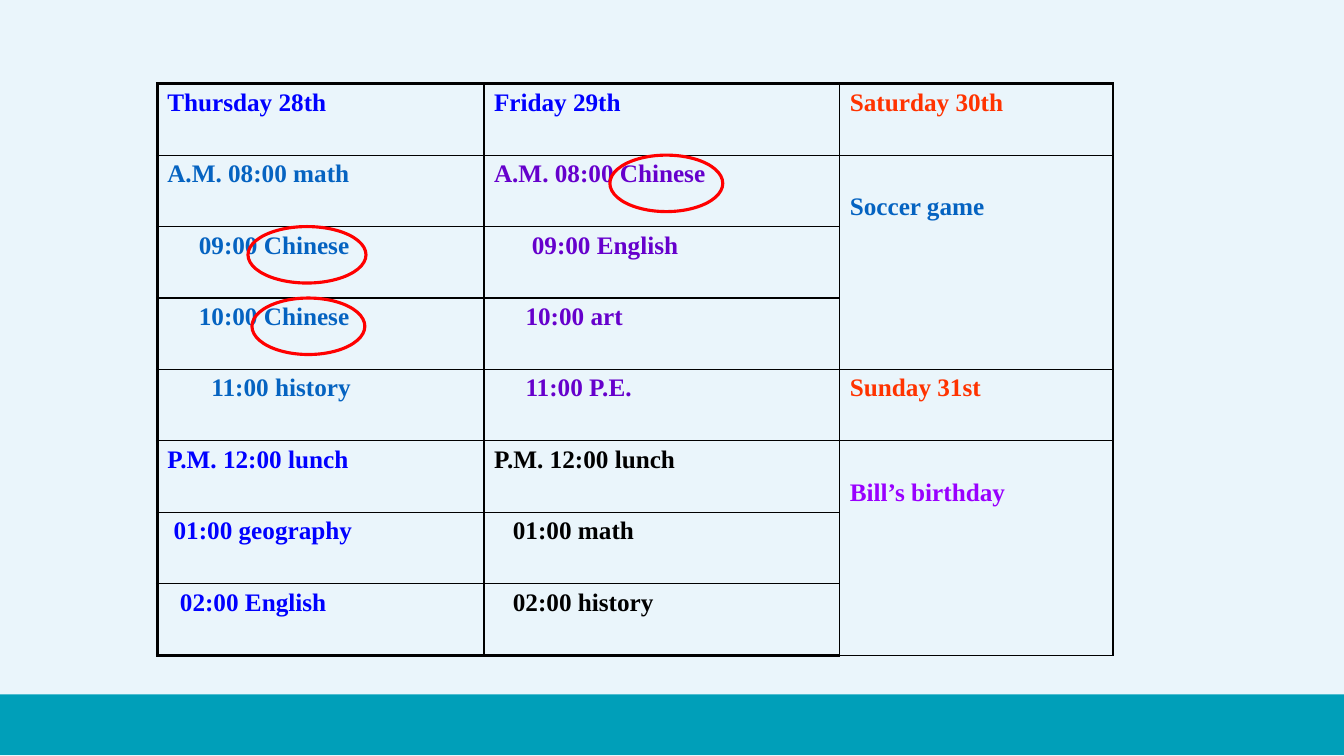
from dataclasses import dataclass

from lxml import etree
from pptx import Presentation
from pptx import util as u
from pptx.dml.color import RGBColor
from pptx.enum import shapes
from pptx.oxml.ns import qn


@dataclass(frozen=True)
class Theme:
    font: str = "Times New Roman"
    size: float = 18
    backdrop: str = "EAF5FB"
    band: str = "009FB9"
    border: str = "000000"
    ring: str = "FF0000"
    blue: str = "0000FF"
    azure: str = "0563C1"
    purple: str = "6600CC"
    violet: str = "9900FF"
    orange: str = "FF3300"
    black: str = "000000"
    thin: float = 1
    thick: float = 2.25


@dataclass(frozen=True)
class Entry:
    text: str
    color: str
    indent: int = 0
    row_span: int = 1


@dataclass(frozen=True)
class Ring:
    row: int
    left: float
    width: float


THEME = Theme()
SLIDE_WIDTH = u.Inches(13.33)
SLIDE_HEIGHT = u.Inches(7.5)
TABLE_LEFT, TABLE_TOP = 11.7, 11.07
COLUMN_WIDTHS = (24.31, 26.48, 20.33)
ROW_HEIGHT = 9.45
ROW_COUNT = 8
RING_HEIGHT = 7.47
BAND_TOP, BAND_HEIGHT = 91.87, 8
INDENT_STEP = u.Pt(THEME.size / 4)
SPANNED_TOP_MARGIN = u.Inches(0.38)

THURSDAY = (
    Entry("Thursday 28th", THEME.blue),
    Entry("A.M. 08:00 math", THEME.azure),
    Entry("09:00 Chinese", THEME.azure, 5),
    Entry("10:00 Chinese", THEME.azure, 5),
    Entry("11:00 history", THEME.azure, 7),
    Entry("P.M. 12:00 lunch", THEME.blue),
    Entry("01:00 geography", THEME.blue, 1),
    Entry("02:00 English", THEME.blue, 2),
)
FRIDAY = (
    Entry("Friday 29th", THEME.blue),
    Entry("A.M. 08:00 Chinese", THEME.purple),
    Entry("09:00 English", THEME.purple, 6),
    Entry("10:00 art", THEME.purple, 5),
    Entry("11:00 P.E.", THEME.purple, 5),
    Entry("P.M. 12:00 lunch", THEME.black),
    Entry("01:00 math", THEME.black, 3),
    Entry("02:00 history", THEME.black, 3),
)
WEEKEND = (
    Entry("Saturday 30th", THEME.orange),
    Entry("Soccer game", THEME.azure, row_span=3),
    Entry("Sunday 31st", THEME.orange),
    Entry("Bill’s birthday", THEME.violet, row_span=3),
)
DAYS = (THURSDAY, FRIDAY, WEEKEND)
RINGS = (Ring(2, 18.45, 8.78), Ring(3, 18.75, 8.4), Ring(1, 45.38, 8.4))


def across(percent: float) -> int:
    return round(SLIDE_WIDTH * percent / 100)


def down(percent: float) -> int:
    return round(SLIDE_HEIGHT * percent / 100)


def rgb(color: str) -> RGBColor:
    return RGBColor.from_string(color)


def draw_border(cell, side: str, width: float) -> None:
    properties = cell._tc.get_or_add_tcPr()
    line = etree.SubElement(properties, qn(f"a:ln{side}"), w=str(int(u.Pt(width))))
    fill = etree.SubElement(line, qn("a:solidFill"))
    etree.SubElement(fill, qn("a:srgbClr"), val=THEME.border)


def style_cell(cell, row: int, column: int) -> None:
    outer_sides = {
        "L": column == 0,
        "R": column == len(DAYS) - 1,
        "T": row == 0,
        "B": row == ROW_COUNT - 1,
    }
    for side, is_outer in outer_sides.items():
        draw_border(cell, side, THEME.thick if is_outer else THEME.thin)
    cell.fill.background()


def write_entry(cell, entry: Entry) -> None:
    if entry.row_span > 1:
        cell.margin_top = SPANNED_TOP_MARGIN
    paragraph = cell.text_frame.paragraphs[0]
    paragraph.text = entry.text
    if entry.indent:
        paragraph._p.get_or_add_pPr().set("marL", str(entry.indent * INDENT_STEP))
    font = paragraph.font
    font.name = THEME.font
    font.size = u.Pt(THEME.size)
    font.bold = True
    font.color.rgb = rgb(entry.color)


def draw_schedule(slide) -> None:
    frame = slide.shapes.add_table(
        ROW_COUNT, len(DAYS), across(TABLE_LEFT), down(TABLE_TOP),
        across(sum(COLUMN_WIDTHS)), down(ROW_HEIGHT * ROW_COUNT))
    table = frame.table
    table.first_row = False
    table.horz_banding = False
    for table_row in table.rows:
        table_row.height = down(ROW_HEIGHT)
    for column, (day, width) in enumerate(zip(DAYS, COLUMN_WIDTHS)):
        table.columns[column].width = across(width)
        for row in range(ROW_COUNT):
            style_cell(table.cell(row, column), row, column)
        row = 0
        for entry in day:
            cell = table.cell(row, column)
            if entry.row_span > 1:
                cell.merge(table.cell(row + entry.row_span - 1, column))
            write_entry(cell, entry)
            row += entry.row_span


def draw_band(slide) -> None:
    band = slide.shapes.add_shape(
        shapes.MSO_SHAPE.RECTANGLE, 0, down(BAND_TOP), SLIDE_WIDTH, down(BAND_HEIGHT))
    band.shadow.inherit = False
    band.fill.solid()
    band.fill.fore_color.rgb = rgb(THEME.band)
    band.line.fill.background()


def draw_ring(slide, ring: Ring) -> None:
    oval = slide.shapes.add_shape(
        shapes.MSO_SHAPE.OVAL, across(ring.left), down(TABLE_TOP + ring.row * ROW_HEIGHT),
        across(ring.width), down(RING_HEIGHT))
    oval.shadow.inherit = False
    oval.fill.background()
    oval.line.color.rgb = rgb(THEME.ring)
    oval.line.width = u.Pt(THEME.thick)


def main() -> None:
    presentation = Presentation()
    presentation.slide_width = SLIDE_WIDTH
    presentation.slide_height = SLIDE_HEIGHT
    slide = presentation.slides.add_slide(presentation.slide_layouts[6])
    slide.background.fill.solid()
    slide.background.fill.fore_color.rgb = rgb(THEME.backdrop)
    draw_band(slide)
    draw_schedule(slide)
    for ring in RINGS:
        draw_ring(slide, ring)
    presentation.save("out.pptx")


if __name__ == "__main__":
    main()
